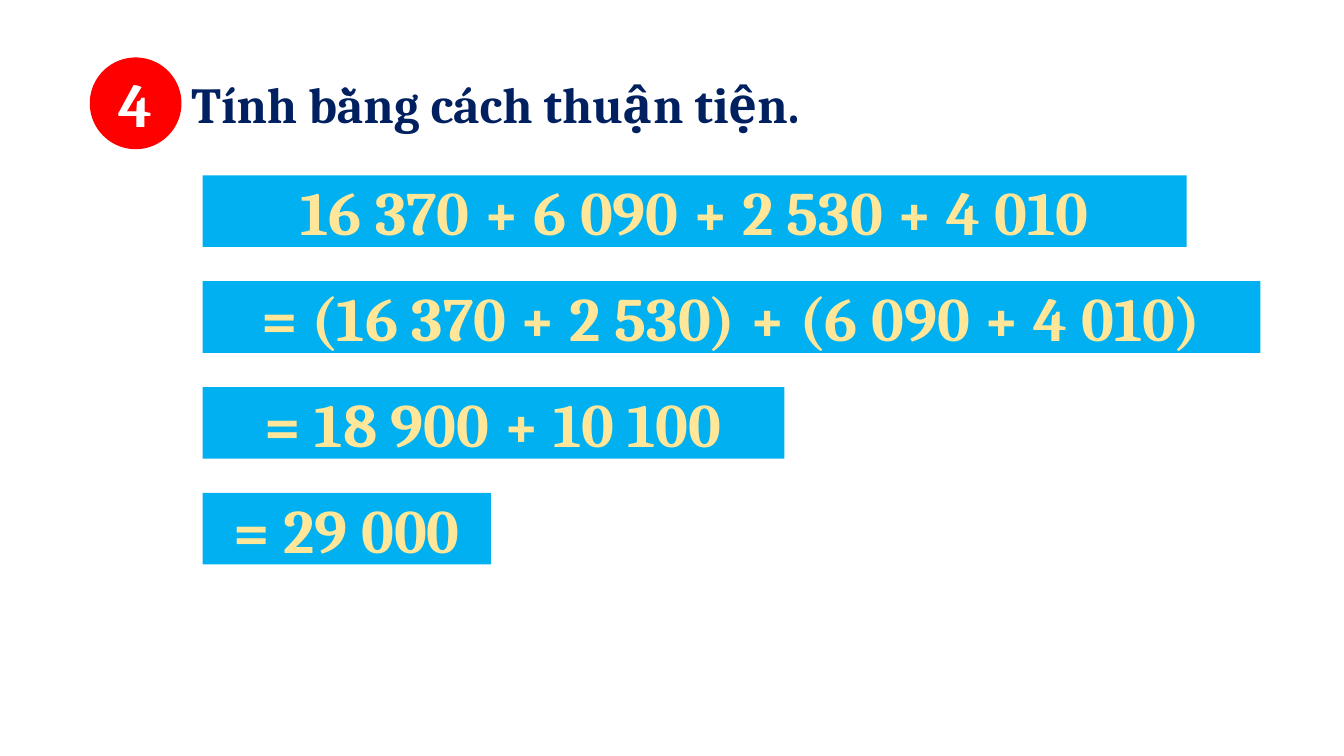
from pptx import Presentation
from pptx.dml.color import RGBColor
from pptx.enum.shapes import MSO_SHAPE
from pptx.enum.text import MSO_ANCHOR, MSO_AUTO_SIZE, PP_ALIGN
from pptx.util import Inches, Pt

OVAL = MSO_SHAPE.OVAL
RECTANGLE = MSO_SHAPE.RECTANGLE
MIDDLE = MSO_ANCHOR.MIDDLE
TOP = MSO_ANCHOR.TOP
CENTER = PP_ALIGN.CENTER
JUSTIFY = PP_ALIGN.JUSTIFY
FIT_SHAPE = MSO_AUTO_SIZE.SHAPE_TO_FIT_TEXT

RED = "FF0000"
WHITE = "FFFFFF"
NAVY = "002060"
SKY = "00B0F0"
CREAM = "FFE699"

STEP_LEFT, STEP_TOP, STEP_HEIGHT, STEP_PITCH = 2.01, 1.74, 0.71, 1.05
STEPS = [
    ("16 370 + 6 090 + 2 530 + 4 010", 9.76),
    ("= (16 370 + 2 530) + (6 090 + 4 010)", 10.49),
    ("= 18 900 + 10 100", 5.77),
    ("= 29 000", 2.86),
]


def color(value):
    return RGBColor.from_string(value)


def write(frame, text, size=44, ink=WHITE, align=CENTER, anchor=MIDDLE, font="Cambria"):
    frame.word_wrap = True
    frame.vertical_anchor = anchor
    paragraph = frame.paragraphs[0]
    paragraph.alignment = align
    run = paragraph.add_run()
    run.text = text
    run.font.name = font
    run.font.size = Pt(size)
    run.font.bold = True
    run.font.color.rgb = color(ink)


class ExerciseSlide:
    def __init__(self, presentation):
        self.slide = presentation.slides.add_slide(presentation.slide_layouts[6])

    def block(self, kind, box, fill, text, ink):
        block = self.slide.shapes.add_shape(kind, *map(Inches, box))
        block.shadow.inherit = False
        block.fill.solid()
        block.fill.fore_color.rgb = color(fill)
        block.line.fill.background()
        write(block.text_frame, text, ink=ink)

    def heading(self, box, text):
        heading = self.slide.shapes.add_textbox(*map(Inches, box))
        write(heading.text_frame, text, size=36, ink=NAVY, align=JUSTIFY, anchor=TOP)
        heading.text_frame.auto_size = FIT_SHAPE


def main():
    presentation = Presentation()
    presentation.slide_width = Inches(13.33)
    presentation.slide_height = Inches(7.5)

    exercise = ExerciseSlide(presentation)
    exercise.block(OVAL, (0.89, 0.57, 0.91, 0.91), RED, "4", WHITE)
    exercise.heading((1.8, 0.68, 10.29, 0.71), "Tính bằng cách thuận tiện.")
    for row, (expression, width) in enumerate(STEPS):
        top = STEP_TOP + row * STEP_PITCH
        exercise.block(RECTANGLE, (STEP_LEFT, top, width, STEP_HEIGHT), SKY, expression, CREAM)

    presentation.save("out.pptx")


if __name__ == "__main__":
    main()
